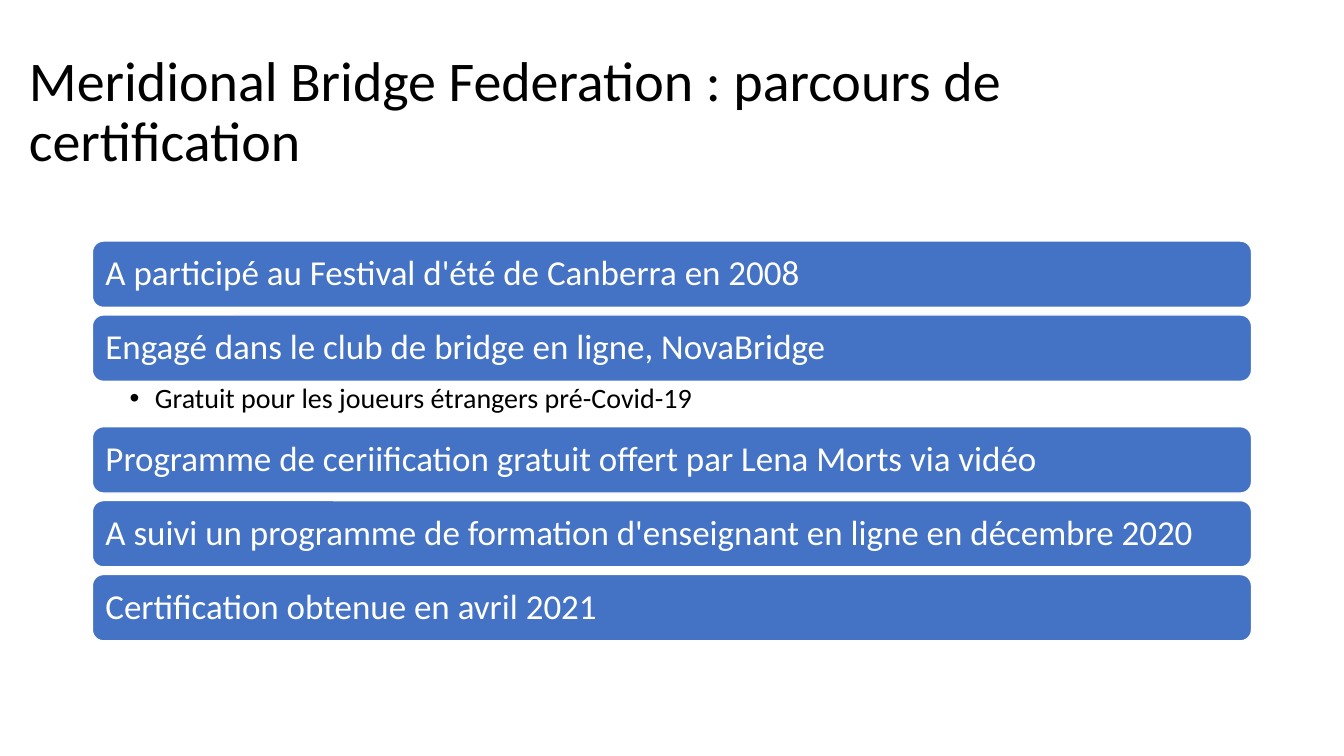
from dataclasses import dataclass

from lxml.etree import SubElement
from pptx import Presentation
from pptx.dml.color import RGBColor
from pptx.enum.shapes import MSO_SHAPE
from pptx.enum.text import MSO_ANCHOR, MSO_AUTO_SIZE, PP_ALIGN
from pptx.oxml.ns import qn
from pptx.util import Inches, Length, Pt

BLUE = RGBColor(0x44, 0x72, 0xC4)
WHITE = RGBColor(0xFF, 0xFF, 0xFF)
BLACK = RGBColor(0x00, 0x00, 0x00)
FONT = "Calibri"

# Grid of 160 columns by 90 rows
CELL = Inches(1 / 12)
LIST_COL, LIST_COLS = 11, 138
LIST_ROW, BAR_ROWS, GAP_ROWS, DETAIL_ROWS = 28.7, 7.9, 0.9, 5.4


@dataclass
class Step:
    text: str
    detail: str = ""


TITLE = "Meridional Bridge Federation : parcours de certification"
STEPS = [
    Step("A participé au Festival d'été de Canberra en 2008"),
    Step("Engagé dans le club de bridge en ligne, NovaBridge",
         "Gratuit pour les joueurs étrangers pré-Covid-19"),
    Step("Programme de ceriification gratuit offert par Lena Morts via vidéo"),
    Step("A suivi un programme de formation d'enseignant en ligne en décembre 2020"),
    Step("Certification obtenue en avril 2021"),
]


def cells(n: float) -> Length:
    return Length(round(n * CELL))


def place(sp, col: float, row: float, cols: float, rows: float) -> None:
    sp.left, sp.top, sp.width, sp.height = map(cells, (col, row, cols, rows))


def write(sp, text: str, size: float, color: RGBColor, anchor: MSO_ANCHOR,
          insets: tuple[float, float, float, float] = (0.1, 0.05, 0.1, 0.05)) -> None:
    tf = sp.text_frame
    tf.text = text
    tf.word_wrap = True
    tf.auto_size = MSO_AUTO_SIZE.NONE
    tf.vertical_anchor = anchor
    tf.margin_left, tf.margin_top, tf.margin_right, tf.margin_bottom = map(Inches, insets)
    p = tf.paragraphs[0]
    p.alignment = PP_ALIGN.LEFT
    p.line_spacing = 0.9
    p.space_before = p.space_after = Pt(0)
    font = p.runs[0].font
    font.name, font.size = FONT, Pt(size)
    font.color.rgb = color


def add_bar(slide, text: str, row: float) -> None:
    sp = slide.shapes.add_shape(MSO_SHAPE.ROUNDED_RECTANGLE, cells(LIST_COL), cells(row),
                                cells(LIST_COLS), cells(BAR_ROWS))
    sp.shadow.inherit = False
    sp.fill.solid()
    sp.fill.fore_color.rgb = BLUE
    sp.line.color.rgb = WHITE
    sp.line.width = Pt(1)
    write(sp, text, 25, WHITE, MSO_ANCHOR.MIDDLE, (0.1, 0.1, 0.1, 0.1))


def fill_detail(body, text: str, row: float) -> None:
    place(body, LIST_COL, row, LIST_COLS, DETAIL_ROWS)
    write(body, text, 20, BLACK, MSO_ANCHOR.TOP, (0.37, 0.03, 0.19, 0.03))
    p = body.text_frame.paragraphs[0]
    p.level = 1
    pPr = p._p.get_or_add_pPr()
    pPr.set("marL", str(Inches(0.25)))
    pPr.set("indent", str(-Inches(0.25)))
    SubElement(pPr, qn("a:buFont"), typeface="Arial")
    SubElement(pPr, qn("a:buChar"), char="•")


def main() -> None:
    prs = Presentation()
    prs.slide_width, prs.slide_height = cells(160), cells(90)
    slide = prs.slides.add_slide(prs.slide_layouts[1])

    # Title
    title = slide.shapes.title
    place(title, 2.25, 4.8, 148.9, 17.4)
    write(title, TITLE, 40, BLACK, MSO_ANCHOR.MIDDLE)

    # Steps, stacked from top to bottom; a detail takes the place of the gap
    row = LIST_ROW
    for step in STEPS:
        add_bar(slide, step.text, row)
        row += BAR_ROWS
        if step.detail:
            fill_detail(slide.placeholders[1], step.detail, row)
        row += DETAIL_ROWS if step.detail else GAP_ROWS

    prs.save("out.pptx")


if __name__ == "__main__":
    main()
